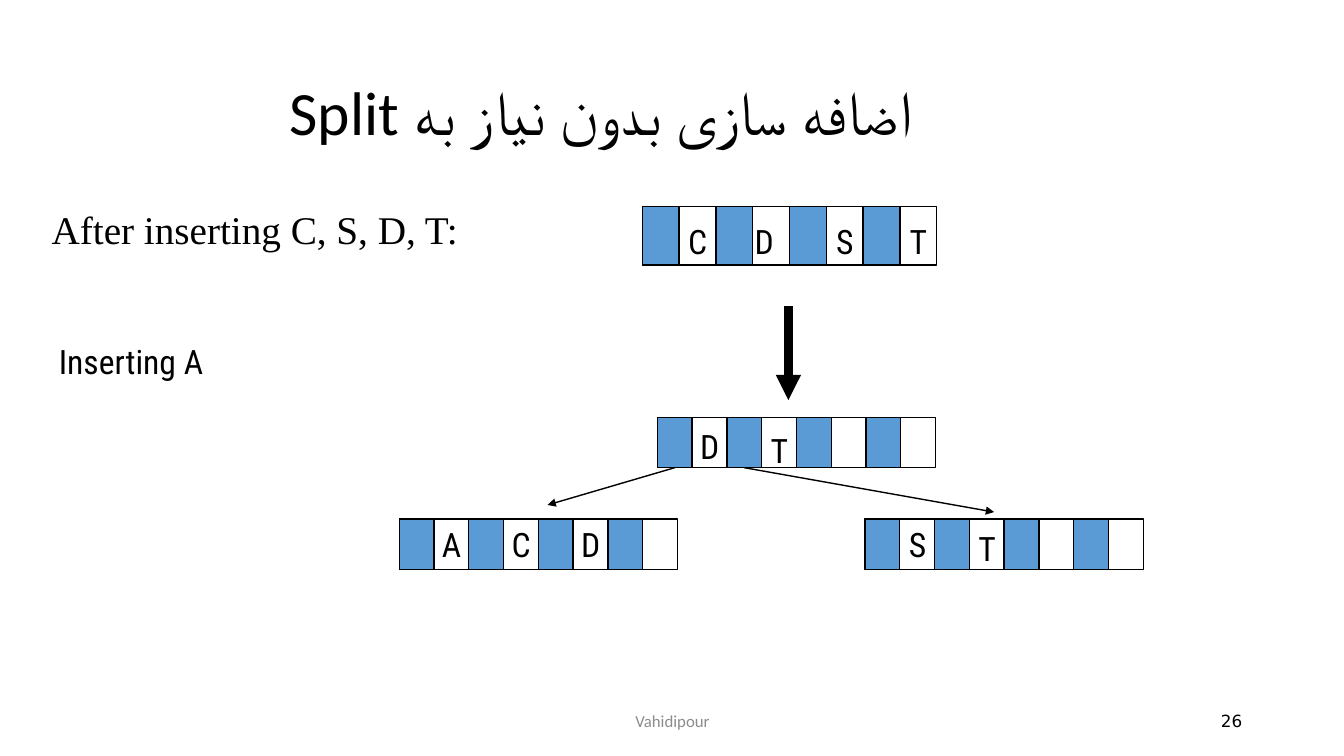
"""Build the slide on inserting keys into a B+ tree without a split."""
from dataclasses import dataclass

import pptx
import pptx.dml.color
import pptx.enum.shapes
import pptx.enum.text
import pptx.oxml
import pptx.oxml.ns
import pptx.shapes.autoshape
import pptx.shapes.connector
import pptx.slide
import pptx.text.text
import pptx.util

EMU_PER_PX = 9144
COLOURS = {"ink": "000000", "pointer": "5B9BD5", "footer": "8C8C8C"}
KEY_FONT = "Roboto Condensed"
ALIGN = pptx.enum.text.PP_ALIGN
ANCHOR = pptx.enum.text.MSO_ANCHOR
SLOTS = 4
KEY_WIDTH, KEY_HEIGHT = 56, 50


@dataclass(frozen=True)
class Key:
    letter: str
    dy: int = 0
    dx: int = 0


@dataclass(frozen=True)
class Node:
    left: int
    top: int
    width: int
    height: int
    keys: tuple[Key, ...]


@dataclass(frozen=True)
class Label:
    text: str
    left: int
    top: int
    width: int
    height: int
    size: int = 24
    font: str = KEY_FONT
    colour: str = "ink"
    align: ALIGN = ALIGN.CENTER
    anchor: ANCHOR = ANCHOR.TOP


@dataclass(frozen=True)
class Arrow:
    start: tuple[int, int]
    end: tuple[int, int]
    weight: int = 1


BEFORE = Node(637, 205, 292, 58, (Key("C", 9), Key("D", 9, -7), Key("S", 9), Key("T", 9)))
ROOT = Node(652, 414, 276, 50, (Key("D", 4), Key("T", 8)))
LEFT_LEAF = Node(396, 515, 276, 50, (Key("A"), Key("C"), Key("D")))
RIGHT_LEAF = Node(858, 515, 276, 50, (Key("S"), Key("T", 4)))

LABELS = (
    Label("Vahidipour", 442, 695, 450, 40, 12, "Calibri", "footer", anchor=ANCHOR.MIDDLE),
    Label("26", 942, 695, 300, 40, 12, "DejaVu Sans", align=ALIGN.RIGHT, anchor=ANCHOR.MIDDLE),
    Label("After inserting C, S, D, T: ", 40, 199, 435, 57, 28, "Times New Roman"),
    Label("Inserting A", 40, 333, 180, 50),
)
INSERTION = Arrow((782, 304), (782, 397), 6)
CHILD_ARROWS = (Arrow((671, 464), (543, 501)), Arrow((740, 464), (986, 508)))


def px(length: float) -> pptx.util.Emu:
    """Turn pixels into EMU."""
    return pptx.util.Emu(round(length * EMU_PER_PX))


def rgb(name: str) -> pptx.dml.color.RGBColor:
    """Look up a named colour."""
    return pptx.dml.color.RGBColor.from_string(COLOURS[name])


def style(paragraph: pptx.text.text._Paragraph, size: int, font: str, colour: str) -> None:
    """Format every run of a paragraph."""
    for run in paragraph.runs:
        run.font.size = pptx.util.Pt(size)
        run.font.name = font
        run.font.color.rgb = rgb(colour)


def add_label(slide: pptx.slide.Slide, label: Label) -> None:
    """Add one line of text."""
    shape = slide.shapes.add_textbox(
        px(label.left), px(label.top), px(label.width), px(label.height)
    )
    text_frame = shape.text_frame
    text_frame.text = label.text
    text_frame.word_wrap = False
    text_frame.vertical_anchor = label.anchor
    paragraph = text_frame.paragraphs[0]
    paragraph.alignment = label.align
    style(paragraph, label.size, label.font, label.colour)


def add_box(
    slide: pptx.slide.Slide, left: float, top: int, width: float, height: int, fill: str = ""
) -> pptx.shapes.autoshape.Shape:
    """Add an outlined rectangle, filled when a colour is named."""
    shape = slide.shapes.add_shape(
        pptx.enum.shapes.MSO_SHAPE.RECTANGLE, px(left), px(top), px(width), px(height)
    )
    shape.shadow.inherit = False
    shape.line.color.rgb = rgb("ink")
    shape.line.width = pptx.util.Pt(1)
    if fill:
        shape.fill.solid()
        shape.fill.fore_color.rgb = rgb(fill)
    else:
        shape.fill.background()
    return shape


def add_node(slide: pptx.slide.Slide, node: Node) -> list[pptx.shapes.autoshape.Shape]:
    """Draw a node with alternating pointers and keys, and return the pointers."""
    add_box(slide, node.left, node.top, node.width, node.height)
    cell = node.width / (2 * SLOTS)
    pointers = [
        add_box(slide, node.left + 2 * slot * cell, node.top, cell, node.height, "pointer")
        for slot in range(SLOTS)
    ]
    for slot, key in enumerate(node.keys):
        centre = node.left + (2 * slot + 1.5) * cell + key.dx
        left = round(centre - KEY_WIDTH / 2)
        add_label(slide, Label(key.letter, left, node.top + key.dy, KEY_WIDTH, KEY_HEIGHT))
    return pointers


def add_arrow(slide: pptx.slide.Slide, arrow: Arrow) -> pptx.shapes.connector.Connector:
    """Draw a straight arrow with a triangular head."""
    connector = slide.shapes.add_connector(
        pptx.enum.shapes.MSO_CONNECTOR.STRAIGHT,
        *(px(length) for length in arrow.start + arrow.end),
    )
    connector.line.color.rgb = rgb("ink")
    connector.line.width = pptx.util.Pt(arrow.weight)
    namespace = pptx.oxml.ns.nsdecls("a")
    line = connector.line._get_or_add_ln()
    line.append(pptx.oxml.parse_xml(f'<a:tailEnd {namespace} type="triangle"/>'))
    connector._element.spPr.append(pptx.oxml.parse_xml(f"<a:effectLst {namespace}/>"))
    return connector


def set_title(slide: pptx.slide.Slide) -> None:
    """Place and format the right-to-left title."""
    title = slide.shapes.title
    title.left, title.top, title.width, title.height = px(233), px(52), px(724), px(125)
    text_frame = title.text_frame
    text_frame.text = "اضافه سازی بدون نیاز به Split"
    text_frame.word_wrap = True
    text_frame.auto_size = pptx.enum.text.MSO_AUTO_SIZE.NONE
    text_frame.vertical_anchor = ANCHOR.MIDDLE
    paragraph = text_frame.paragraphs[0]
    paragraph.alignment = ALIGN.CENTER
    paragraph.line_spacing = 0.9
    paragraph._p.get_or_add_pPr().set("rtl", "1")
    style(paragraph, 44, "Calibri", "ink")


def main() -> None:
    """Build and save the presentation."""
    presentation = pptx.Presentation()
    presentation.slide_width, presentation.slide_height = px(1333), px(750)
    slide = presentation.slides.add_slide(presentation.slide_layouts[5])
    set_title(slide)
    for label in LABELS:
        add_label(slide, label)
    add_node(slide, BEFORE)
    add_arrow(slide, INSERTION)
    for leaf in (RIGHT_LEAF, LEFT_LEAF):
        add_node(slide, leaf)
    root_pointers = add_node(slide, ROOT)
    for pointer, arrow in zip(root_pointers, CHILD_ARROWS):
        add_arrow(slide, arrow).begin_connect(pointer, 2)
    presentation.save("out.pptx")


if __name__ == "__main__":
    main()
